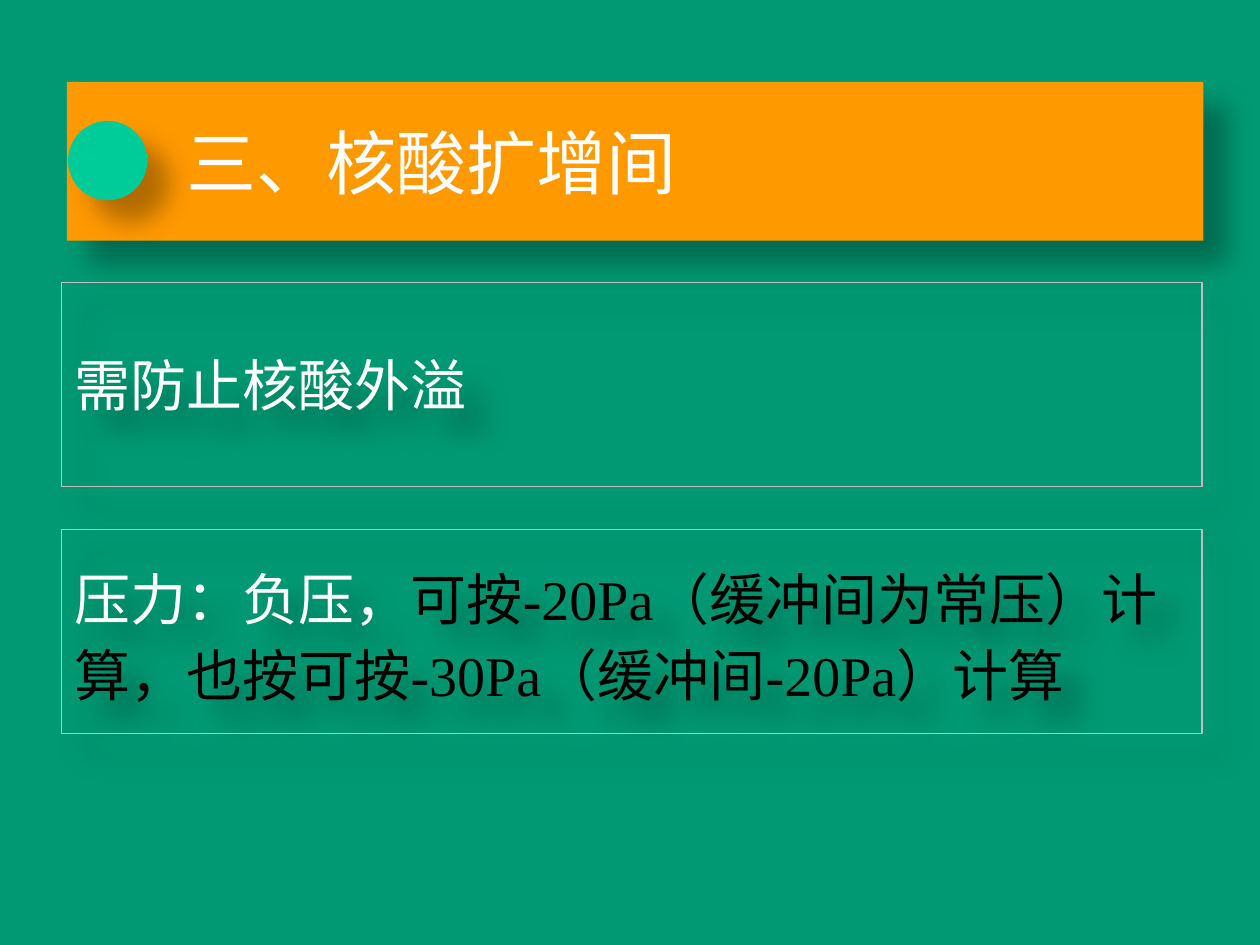
from dataclasses import dataclass

from lxml import etree
from pptx import Presentation
from pptx import util as u
from pptx.dml.color import RGBColor
from pptx.enum import shapes, text
from pptx.oxml.ns import qn


@dataclass(frozen=True)
class Theme:
    background: str = "009973"
    banner: str = "FF9900"
    dot: str = "00CC99"
    border: str = "BFBFBF"
    light: str = "FFFFFF"
    dark: str = "000000"
    font: str = "Times New Roman"
    title_size: int = 40
    body_size: int = 32


THEME = Theme()


def color(value):
    return RGBColor.from_string(value)


def add_shadow(shape):
    shape.shadow.inherit = False
    effects = shape._element.spPr.find(qn("a:effectLst"))
    shadow = etree.SubElement(effects, qn("a:outerShdw"), {
        "blurRad": str(u.Pt(15)),
        "dist": str(u.Pt(18)),
        "dir": str(45 * 60000),
        "algn": "ctr",
        "rotWithShape": "0",
    })
    tint = etree.SubElement(shadow, qn("a:srgbClr"), val=THEME.dark)
    etree.SubElement(tint, qn("a:alpha"), val="30000")


def add_block(slide, kind, bounds, fill=None, line=None):
    shape = slide.shapes.add_shape(kind, *map(u.Inches, bounds))
    if fill:
        shape.fill.solid()
        shape.fill.fore_color.rgb = color(fill)
    else:
        shape.fill.background()
    if line:
        shape.line.color.rgb = color(line)
        shape.line.width = u.Pt(0.75)
    else:
        shape.line.fill.background()
    add_shadow(shape)
    return shape


def write_text(shape, runs, size, left_inset=0.1, line_spacing=None):
    frame = shape.text_frame
    frame_format = {
        "word_wrap": True,
        "vertical_anchor": text.MSO_ANCHOR.MIDDLE,
        "margin_left": u.Inches(left_inset),
    }
    for name, value in frame_format.items():
        setattr(frame, name, value)
    paragraph = frame.paragraphs[0]
    paragraph.alignment = text.PP_ALIGN.LEFT
    paragraph.line_spacing = line_spacing
    for wording, run_color in runs:
        run = paragraph.add_run()
        run.text = wording
        for name, value in {"name": THEME.font, "size": u.Pt(size)}.items():
            setattr(run.font, name, value)
        run.font.color.rgb = color(run_color)


def main():
    presentation = Presentation()
    presentation.slide_width = u.Inches(10)
    presentation.slide_height = u.Inches(7.5)
    slide = presentation.slides.add_slide(presentation.slide_layouts[6])
    slide.background.fill.solid()
    slide.background.fill.fore_color.rgb = color(THEME.background)

    rectangle = shapes.MSO_SHAPE.RECTANGLE
    banner = add_block(slide, rectangle, (0.53, 0.65, 9.02, 1.26), fill=THEME.banner)
    write_text(banner, [("三、核酸扩增间", THEME.light)], THEME.title_size, left_inset=0.95)

    panels = [
        ([("需防止核酸外溢", THEME.light)], None),
        ([("压力：负压，", THEME.light),
          ("可按-20Pa（缓冲间为常压）计算，也按可按-30Pa（缓冲间-20Pa）计算", THEME.dark)], 1.14),
    ]
    for index, (runs, line_spacing) in enumerate(panels):
        bounds = (0.49, 2.24 + index * 1.96, 9.05, 1.62)
        panel = add_block(slide, rectangle, bounds, line=THEME.border)
        write_text(panel, runs, THEME.body_size, line_spacing=line_spacing)

    add_block(slide, shapes.MSO_SHAPE.OVAL, (0.54, 0.96, 0.63, 0.63), fill=THEME.dot)
    presentation.save("out.pptx")


if __name__ == "__main__":
    main()
